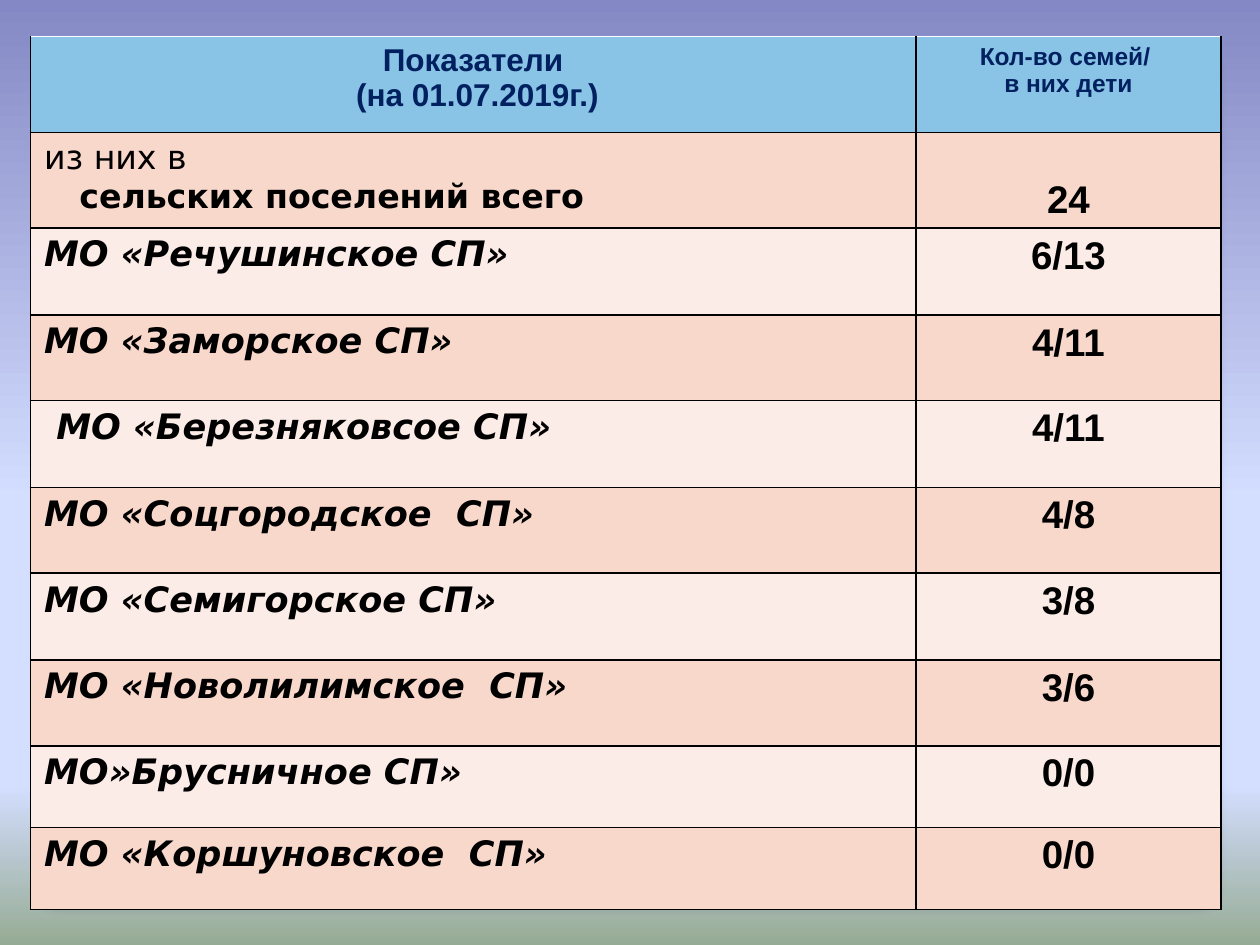
from dataclasses import dataclass

from lxml.etree import SubElement
from pptx import Presentation
from pptx.dml.color import RGBColor
from pptx.enum.shapes import MSO_SHAPE as Preset
from pptx.enum.text import MSO_ANCHOR as Anchor, PP_ALIGN as Align
from pptx.oxml.ns import qn
from pptx.slide import Slide
from pptx.table import _Cell as Cell
from pptx.util import Inches, Pt

COLORS = {
    "card": "FFFFFF",
    "card_line": "A4A4A4",
    "shadow": "000000",
    "header": "89C3E5",
    "header_text": "002060",
    "dark_band": "F9D8CC",
    "light_band": "FCECE7",
    "text": "000000",
    "border": "000000",
    "top_border": "FFFFFF",
}
SKY_STOPS = [(0, "8488C4"), (53, "D4DEFF"), (83, "D4DEFF"), (100, "96AB94")]
COLUMN_WIDTHS = [7.03, 2.42]
ROW_HEIGHTS = [0.76] * 2 + [0.69, 0.68] * 3 + [0.65] * 2


@dataclass(frozen=True)
class TextStyle:
    size: int
    font: str = "Arial"
    color: str = "text"
    bold: bool = True
    italic: bool = False
    align: Align = Align.CENTER


INDICATOR_HEADER = TextStyle(18, color="header_text")
COUNT_HEADER = TextStyle(14, color="header_text")
TOTAL_LABEL = TextStyle(19, "DejaVu Sans", align=Align.LEFT)
SETTLEMENT = TextStyle(20, "DejaVu Sans", italic=True, align=Align.LEFT)
COUNT = TextStyle(22)

SETTLEMENT_COUNTS = [
    ("МО «Речушинское СП»", "6/13"),
    ("МО «Заморское СП»", "4/11"),
    (" МО «Березняковсое СП»", "4/11"),
    ("МО «Соцгородское  СП»", "4/8"),
    ("МО «Семигорское СП»", "3/8"),
    ("МО «Новолилимское  СП»", "3/6"),
    ("МО»Брусничное СП»", "0/0"),
    ("МО «Коршуновское  СП»", "0/0"),
]
ROWS = [
    (("Показатели\n (на 01.07.2019г.)", INDICATOR_HEADER),
     ("Кол-во семей/ \nв них дети", COUNT_HEADER)),
    (("из них в\nсельских поселений всего", TOTAL_LABEL), ("24", COUNT)),
] + [((name, SETTLEMENT), (count, COUNT)) for name, count in SETTLEMENT_COUNTS]


def paint_sky(slide: Slide) -> None:
    """Fill the background with a vertical gradient of several stops."""
    fill = slide.background.fill
    fill.gradient()
    fill.gradient_angle = 270
    stops = slide.element.find(".//" + qn("a:gsLst"))
    stops.clear()
    for percent, color in SKY_STOPS:
        stop = SubElement(stops, qn("a:gs"), pos=str(percent * 1000))
        SubElement(stop, qn("a:srgbClr"), val=color)


def add_shadowed_card(slide: Slide) -> None:
    """Lay the card whose soft shadow shows around the table edge."""
    card = slide.shapes.add_shape(
        Preset.ROUNDED_RECTANGLE,
        Inches(0.33), Inches(0.36), Inches(9.33), Inches(6.78))
    card.adjustments[0] = 0.02
    card.fill.solid()
    card.fill.fore_color.rgb = RGBColor.from_string(COLORS["card"])
    card.line.color.rgb = RGBColor.from_string(COLORS["card_line"])
    card.line.width = Pt(0.16)
    card.shadow.inherit = False
    effects = card.element.spPr.find(qn("a:effectLst"))
    shadow = SubElement(effects, qn("a:outerShdw"), blurRad=str(Pt(6)),
                        dist=str(Pt(4)), dir="5400000", rotWithShape="0")
    tint = SubElement(shadow, qn("a:srgbClr"), val=COLORS["shadow"])
    SubElement(tint, qn("a:alpha"), val="25000")


def draw_borders(cell: Cell, top_color: str) -> None:
    """Outline the cell; call before filling it, as lines precede the fill."""
    properties = cell._tc.get_or_add_tcPr()
    for side in "LRTB":
        line = SubElement(properties, qn(f"a:ln{side}"), w=str(Pt(1)))
        line_fill = SubElement(line, qn("a:solidFill"))
        color = top_color if side == "T" else "border"
        SubElement(line_fill, qn("a:srgbClr"), val=COLORS[color])


def write_cell(cell: Cell, text: str, style: TextStyle) -> None:
    cell.margin_left = cell.margin_right = Inches(0.11)
    cell.margin_top = cell.margin_bottom = Inches(0.05)
    cell.text_frame.text = text
    for paragraph in cell.text_frame.paragraphs:
        paragraph.alignment = style.align
        for run in paragraph.runs:
            font = run.font
            font.name, font.size = style.font, Pt(style.size)
            font.bold, font.italic = style.bold, style.italic
            font.color.rgb = RGBColor.from_string(COLORS[style.color])


def add_family_table(slide: Slide) -> None:
    frame = slide.shapes.add_table(
        len(ROWS), len(COLUMN_WIDTHS), Inches(0.24), Inches(0.29),
        Inches(sum(COLUMN_WIDTHS)), Inches(sum(ROW_HEIGHTS)))
    table = frame.table
    for column, width in zip(table.columns, COLUMN_WIDTHS):
        column.width = Inches(width)
    for row, height in zip(table.rows, ROW_HEIGHTS):
        row.height = Inches(height)

    for row_index, entries in enumerate(ROWS):
        band = "dark_band" if row_index % 2 else "light_band"
        is_header = row_index == 0
        for column_index, (text, style) in enumerate(entries):
            cell = table.cell(row_index, column_index)
            draw_borders(cell, "top_border" if is_header else "border")
            cell.fill.solid()
            cell.fill.fore_color.rgb = RGBColor.from_string(
                COLORS["header" if is_header else band])
            write_cell(cell, text, style)

    total_label, total_count = table.cell(1, 0), table.cell(1, 1)
    intro, total = total_label.text_frame.paragraphs
    intro.runs[0].font.bold = False
    total._p.get_or_add_pPr().set("marL", str(Inches(0.28)))
    total_count.vertical_anchor = Anchor.BOTTOM


def main() -> None:
    deck = Presentation()
    deck.slide_width, deck.slide_height = Inches(10), Inches(7.5)
    slide = deck.slides.add_slide(deck.slide_layouts[6])
    paint_sky(slide)
    add_shadowed_card(slide)
    add_family_table(slide)
    deck.save("out.pptx")


if __name__ == "__main__":
    main()
